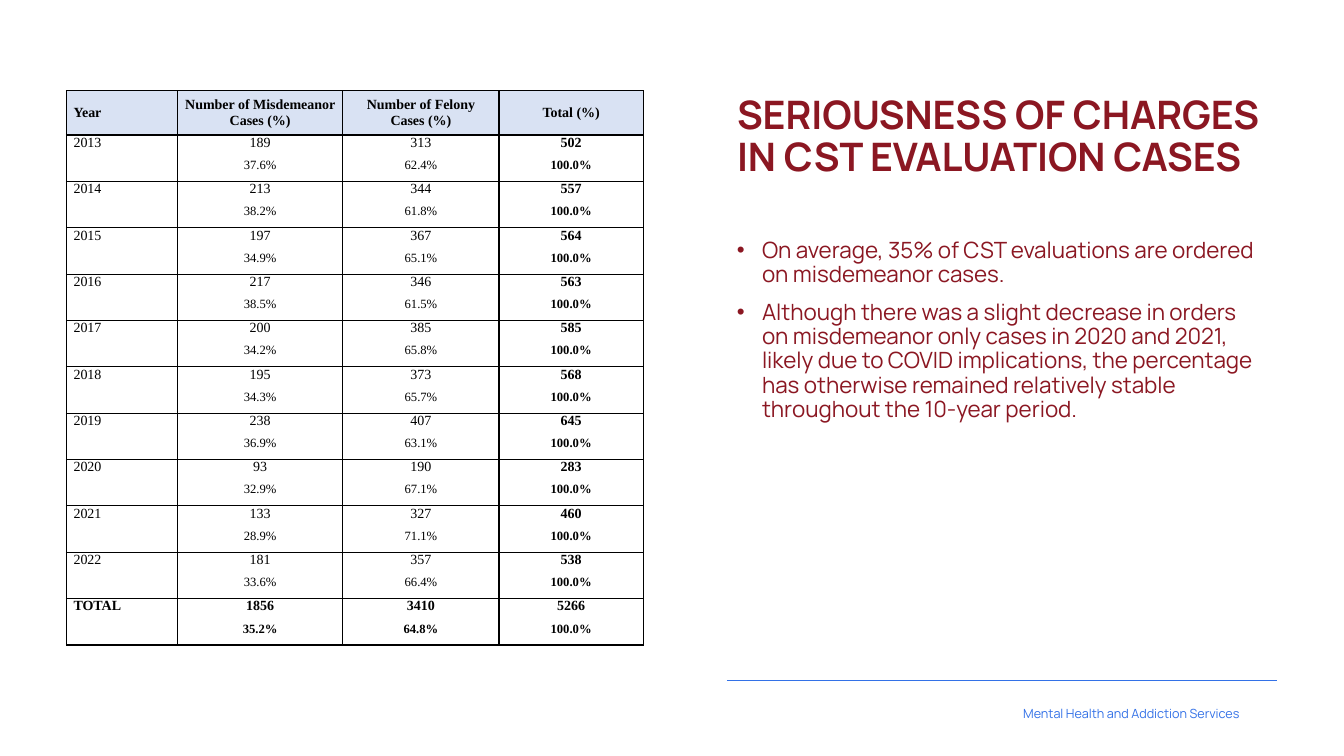
from dataclasses import dataclass
from itertools import product

from lxml.etree import SubElement
from pptx import Presentation
from pptx.dml.color import RGBColor
from pptx.enum.shapes import MSO_CONNECTOR
from pptx.enum.text import MSO_ANCHOR as Anchor, MSO_AUTO_SIZE, PP_ALIGN as Align
from pptx.oxml.ns import qn
from pptx.slide import Slide
from pptx.table import _Cell as Cell
from pptx.text.text import TextFrame, _Paragraph as Paragraph
from pptx.util import Inches, Pt

MAROON = RGBColor(0x8B, 0x17, 0x22)
BLUE = RGBColor(0x33, 0x71, 0xE7)
BLACK = RGBColor(0, 0, 0)
HEADER_FILL = RGBColor(0xD9, 0xE2, 0xF3)
SANS, SERIF = "Manrope", "Times New Roman"

TITLE = "SERIOUSNESS OF CHARGES IN CST EVALUATION CASES"
FOOTER = "Mental Health and Addiction Services"
BULLETS = (
    "On average, 35% of CST evaluations are ordered on misdemeanor cases.",
    "Although there was a slight decrease in orders on misdemeanor only cases in 2020 "
    "and 2021, likely due to COVID implications, the percentage has otherwise remained "
    "relatively stable throughout the 10-year period.",
)
HEADINGS = (
    "Year",
    "Number of Misdemeanor Cases (%)",
    "Number of Felony Cases (%)",
    "Total (%)",
)
COLUMN_WIDTHS = (1.1, 1.64, 1.55, 1.43)
HEADER_HEIGHT, ROW_HEIGHT = 0.44, 0.23


@dataclass(frozen=True)
class YearCases:
    label: str
    misdemeanor: int
    felony: int
    total: int
    misdemeanor_share: str
    felony_share: str

    def rows(self) -> tuple[tuple[str, ...], tuple[str, ...]]:
        counts = (self.label, str(self.misdemeanor), str(self.felony), str(self.total))
        shares = ("", self.misdemeanor_share, self.felony_share, "100.0%")
        return counts, shares


CASES = (
    YearCases("2013", 189, 313, 502, "37.6%", "62.4%"),
    YearCases("2014", 213, 344, 557, "38.2%", "61.8%"),
    YearCases("2015", 197, 367, 564, "34.9%", "65.1%"),
    YearCases("2016", 217, 346, 563, "38.5%", "61.5%"),
    YearCases("2017", 200, 385, 585, "34.2%", "65.8%"),
    YearCases("2018", 195, 373, 568, "34.3%", "65.7%"),
    YearCases("2019", 238, 407, 645, "36.9%", "63.1%"),
    YearCases("2020", 93, 190, 283, "32.9%", "67.1%"),
    YearCases("2021", 133, 327, 460, "28.9%", "71.1%"),
    YearCases("2022", 181, 357, 538, "33.6%", "66.4%"),
    YearCases("TOTAL", 1856, 3410, 5266, "35.2%", "64.8%"),
)


def set_font(
    paragraph: Paragraph, name: str, size: float, color: RGBColor, bold: bool = False
) -> None:
    font = paragraph.font
    font.name, font.size, font.bold = name, Pt(size), bold
    font.color.rgb = color


def add_text_box(
    slide: Slide, left: float, top: float, width: float, height: float
) -> TextFrame:
    box = slide.shapes.add_textbox(
        Inches(left), Inches(top), Inches(width), Inches(height)
    )
    box.text_frame.word_wrap = True
    return box.text_frame


def set_borders(cell: Cell, sides: str) -> None:
    properties = cell._tc.get_or_add_tcPr()
    for side in "LRTB":
        line = SubElement(properties, qn(f"a:ln{side}"), w=str(Pt(1)))
        if side in sides:
            fill = SubElement(line, qn("a:solidFill"))
            SubElement(fill, qn("a:srgbClr"), val=str(BLACK))
        else:
            SubElement(line, qn("a:noFill"))


def add_title(slide: Slide) -> None:
    title = slide.shapes.title
    title.left, title.top = Inches(7.21), Inches(0.9)
    title.width, title.height = Inches(5.46), Inches(0.62)
    frame = title.text_frame
    frame.text = TITLE
    frame.word_wrap = True
    frame.auto_size = MSO_AUTO_SIZE.NONE
    frame.vertical_anchor = Anchor.TOP
    paragraph = frame.paragraphs[0]
    paragraph.alignment = Align.LEFT
    paragraph.line_spacing = 0.9
    set_font(paragraph, SANS, 28, MAROON, bold=True)


def add_bullets(slide: Slide) -> None:
    frame = add_text_box(slide, 7.21, 2.32, 5.46, 4.18)
    frame.text = "\n".join(BULLETS)
    for index, paragraph in enumerate(frame.paragraphs):
        paragraph.line_spacing = 0.9
        if index:
            paragraph.space_before = Pt(10)
        properties = paragraph._p.get_or_add_pPr()
        properties.set("marL", str(Inches(0.25)))
        properties.set("indent", str(Inches(-0.25)))
        SubElement(properties, qn("a:buFont"), typeface="Arial")
        SubElement(properties, qn("a:buChar"), char="•")
        set_font(paragraph, SANS, 16, MAROON)


def add_footer(slide: Slide) -> None:
    rule = slide.shapes.add_connector(
        MSO_CONNECTOR.STRAIGHT, Inches(7.21), Inches(6.75), Inches(12.67), Inches(6.75)
    )
    rule.line.color.rgb = BLUE
    rule.line.width = Pt(1.25)
    SubElement(rule._element.spPr, qn("a:effectLst"))
    frame = add_text_box(slide, 9.35, 6.77, 3.04, 0.61)
    frame.text = FOOTER
    frame.vertical_anchor = Anchor.MIDDLE
    frame.paragraphs[0].alignment = Align.RIGHT
    set_font(frame.paragraphs[0], SANS, 9, BLUE)


def fill_cell(cell: Cell, text: str, row: int, column: int, last_row: int) -> None:
    is_header = row == 0
    is_share = not is_header and row % 2 == 0
    cell.margin_left = cell.margin_right = Inches(0.07)
    cell.margin_top = cell.margin_bottom = 0
    cell.vertical_anchor = Anchor.MIDDLE if is_header else Anchor.TOP
    set_borders(cell, "LRTB" if is_header else "LRB" if is_share else "LRT")
    if is_header:
        cell.fill.solid()
        cell.fill.fore_color.rgb = HEADER_FILL
    else:
        cell.fill.background()
    cell.text = text
    paragraph = cell.text_frame.paragraphs[0]
    paragraph.alignment = Align.CENTER if column else Align.LEFT
    size = 9 if is_share else 10
    bold = is_header or column == len(HEADINGS) - 1 or row >= last_row - 1
    set_font(paragraph, SERIF, size, BLACK, bold)
    if not text:
        SubElement(paragraph._p, qn("a:endParaRPr"), sz=str(size * 100))


def add_case_table(slide: Slide) -> None:
    rows = [HEADINGS, *(row for cases in CASES for row in cases.rows())]
    last_row = len(rows) - 1
    table = slide.shapes.add_table(
        len(rows),
        len(HEADINGS),
        Inches(0.66),
        Inches(0.9),
        Inches(sum(COLUMN_WIDTHS)),
        Inches(HEADER_HEIGHT + last_row * ROW_HEIGHT),
    ).table
    table.first_row = table.horz_banding = False
    for column, width in zip(table.columns, COLUMN_WIDTHS):
        column.width = Inches(width)
    for index, table_row in enumerate(table.rows):
        table_row.height = Inches(ROW_HEIGHT if index else HEADER_HEIGHT)
    for row, column in product(range(len(rows)), range(len(HEADINGS))):
        fill_cell(table.cell(row, column), rows[row][column], row, column, last_row)


def main() -> None:
    presentation = Presentation()
    presentation.slide_width, presentation.slide_height = Inches(13.33), Inches(7.5)
    slide = presentation.slides.add_slide(presentation.slide_layouts[5])
    add_title(slide)
    add_footer(slide)
    add_bullets(slide)
    add_case_table(slide)
    presentation.save("out.pptx")


if __name__ == "__main__":
    main()
